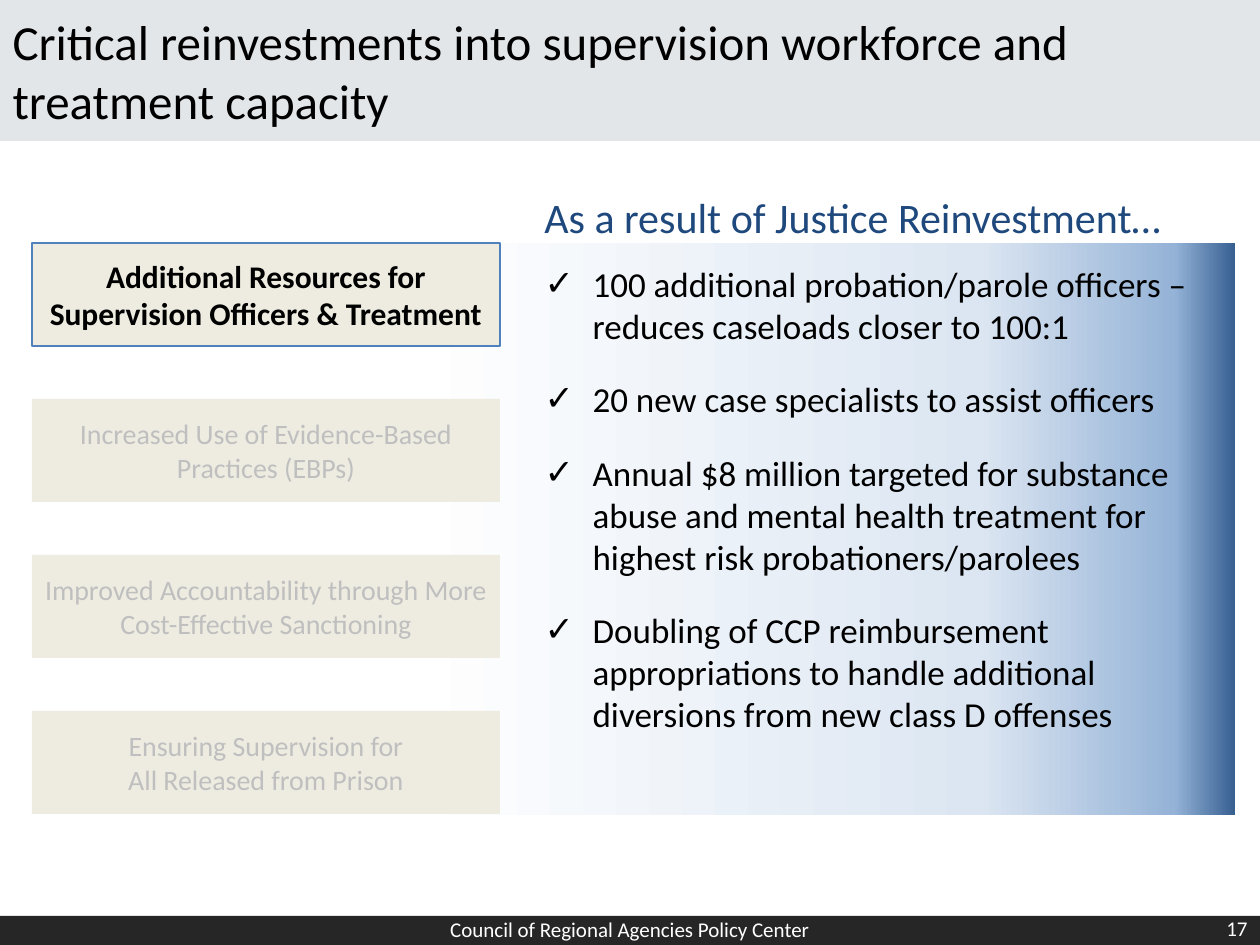
from lxml import etree
from pptx import Presentation
from pptx.dml.color import RGBColor
from pptx.enum.shapes import MSO_SHAPE
from pptx.enum.text import MSO_ANCHOR, MSO_AUTO_SIZE, PP_ALIGN
from pptx.oxml.ns import qn
from pptx.util import Emu, Pt

RECT = MSO_SHAPE.RECTANGLE
LEFT, CENTER, RIGHT = PP_ALIGN.LEFT, PP_ALIGN.CENTER, PP_ALIGN.RIGHT
TOP, MIDDLE = MSO_ANCHOR.TOP, MSO_ANCHOR.MIDDLE
NO_FIT = MSO_AUTO_SIZE.NONE

FONT = "Calibri"
COLORS = {
    "black": "000000", "white": "FFFFFF", "footer": "262626",
    "header": "E2E6E9", "heading": "1F497D", "box": "EEECE1",
    "outline": "4F81BD", "muted": "BFBFBF",
}
PANEL_STOPS = [(0, "376092"), (5, "95B3D7"), (21, "DCE6F2"), (67, "FFFFFF")]

TITLE = "Critical reinvestments into supervision workforce and treatment capacity"
TOPICS = [
    ["Additional Resources for Supervision Officers & Treatment"],
    ["Increased Use of Evidence-Based Practices (EBPs)"],
    ["Improved Accountability through More Cost-Effective Sanctioning"],
    ["Ensuring Supervision for", "All Released from Prison"],
]
RESULTS = [
    "100 additional probation/parole officers – reduces caseloads closer to 100:1",
    "20 new case specialists to assist officers",
    "Annual $8 million targeted for substance abuse and mental health "
    "treatment for highest risk probationers/parolees",
    "Doubling of CCP reimbursement appropriations to handle additional "
    "diversions from new class D offenses",
]


def px(n):
    return Emu(round(n * 914400 / 126))


def rgb(name):
    return RGBColor.from_string(COLORS[name])


def place(sp, x, y, w, h):
    sp.left, sp.top, sp.width, sp.height = px(x), px(y), px(w), px(h)


def write(sp, lines, size, color, align=LEFT, anchor=TOP, bold=False):
    tf = sp.text_frame
    tf.word_wrap = True
    tf.auto_size = NO_FIT
    tf.vertical_anchor = anchor
    for i, line in enumerate(lines):
        p = tf.add_paragraph() if i else tf.paragraphs[0]
        p.alignment = align
        r = p.add_run()
        r.text = line
        r.font.name, r.font.size, r.font.bold = FONT, Pt(size), bold
        r.font.color.rgb = rgb(color)


def add_rect(s, box, fill=None, line=None):
    sp = s.shapes.add_shape(RECT, *map(px, box))
    sp.shadow.inherit = False
    if fill:
        sp.fill.solid()
        sp.fill.fore_color.rgb = rgb(fill)
    if line:
        sp.line.color.rgb = rgb(line)
        sp.line.width = Pt(1)
    else:
        sp.line.fill.background()
    return sp


def add_label(s, box, text, size, color, align=LEFT, anchor=TOP):
    sp = s.shapes.add_textbox(*map(px, box))
    write(sp, [text], size, color, align, anchor)


def add_panel(s, box):
    sp = add_rect(s, box)
    sp.fill.gradient()
    sp.fill.gradient_angle = 180
    stops = sp._element.spPr.find(".//" + qn("a:gsLst"))
    for stop in list(stops):
        stops.remove(stop)
    for pos, color in PANEL_STOPS:
        stop = etree.SubElement(stops, qn("a:gs"), pos=str(pos * 1000))
        etree.SubElement(stop, qn("a:srgbClr"), val=color)
    # Behind the placeholders
    s.shapes._spTree.insert(2, sp._element)


def set_checks(sp):
    for p in sp.text_frame.paragraphs:
        p.space_before = Pt(18)
        pPr = p._p.get_or_add_pPr()
        pPr.set("marL", str(px(48)))
        pPr.set("indent", str(-px(48)))
        etree.SubElement(pPr, qn("a:buChar"), char="✓")


def main():
    prs = Presentation()
    prs.slide_width, prs.slide_height = px(1260), px(945)
    s = prs.slides.add_slide(prs.slide_layouts[1])
    title, body = s.shapes.title, s.placeholders[1]

    # Header
    place(title, 0, 0, 1260, 141)
    title.fill.solid()
    title.fill.fore_color.rgb = rgb("header")
    write(title, [TITLE], 28, "black", anchor=MIDDLE)

    # Results panel
    add_panel(s, (16, 243, 1219, 572))
    add_label(s, (532, 185, 703, 63), "As a result of Justice Reinvestment…",
              24, "heading")
    place(body, 532, 256, 668, 490)
    write(body, RESULTS, 20, "black")
    set_checks(body)

    # Topic boxes, the first one active
    for i, lines in enumerate(TOPICS):
        active = i == 0
        sp = add_rect(s, (32, 243 + 156 * i, 468, 103), "box",
                      "outline" if active else None)
        write(sp, lines, 18 if active else 16, "black" if active else "muted",
              CENTER, MIDDLE, active)

    # Footer
    add_rect(s, (0, 916, 1260, 29), "footer")
    add_label(s, (406, 903, 448, 53), "Council of Regional Agencies Policy Center",
              12, "white", CENTER, MIDDLE)
    add_label(s, (966, 903, 294, 50), "17", 12, "white", RIGHT, MIDDLE)

    prs.save("out.pptx")


if __name__ == "__main__":
    main()
